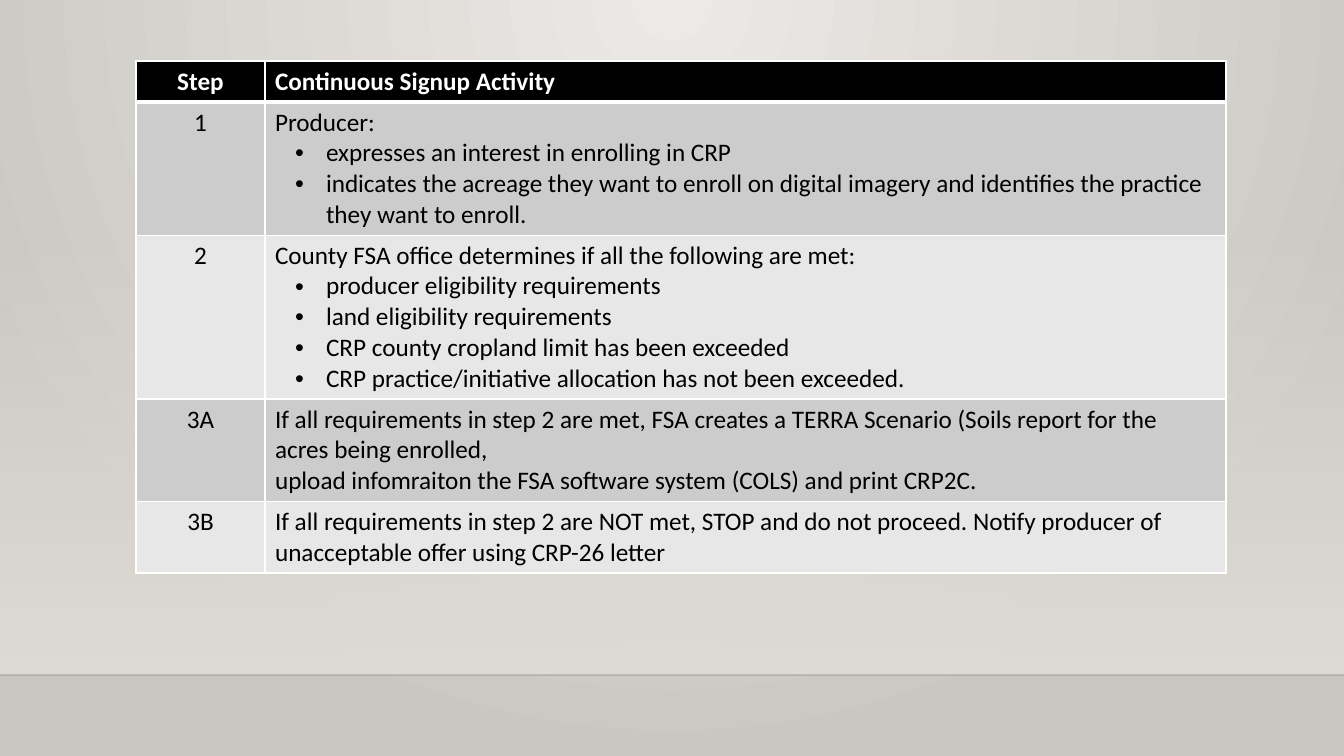
import pptx
import pptx.dml.color
import pptx.enum.shapes
import pptx.enum.text
import pptx.oxml.ns
import pptx.util
from dataclasses import dataclass
from lxml import etree

HEADER = ("Step", ["Continuous Signup Activity"])
STEPS = [
    ("1", ["Producer:",
           "• expresses an interest in enrolling in CRP",
           "• indicates the acreage they want to enroll on digital imagery and "
           "identifies the practice they want to enroll."]),
    ("2", ["County FSA office determines if all the following are met:",
           "• producer eligibility requirements",
           "• land eligibility requirements",
           "• CRP county cropland limit has been exceeded",
           "• CRP practice/initiative allocation has not been exceeded."]),
    ("3A", ["If all requirements in step 2 are met, FSA creates a TERRA Scenario "
            "(Soils report for the acres being enrolled,",
            "upload infomraiton the FSA software system (COLS) and print CRP2C."]),
    ("3B", ["If all requirements in step 2 are NOT met, STOP and do not proceed. "
            "Notify producer of unacceptable offer using CRP-26 letter"]),
]


@dataclass(frozen=True)
class Theme:
    font: str = "Calibri"
    size: int = 18
    header_fill: str = "000000"
    header_text: str = "FFFFFF"
    text: str = "000000"
    bands: tuple = ("CCCCCC", "E7E7E7")
    border: str = "FFFFFF"
    backdrop: tuple = ("ECEAE7", "CAC7C1")
    wall: str = "DFDBD5"
    edge: str = "000001"


THEME = Theme()
SLIDE_W, SLIDE_H = 1344, 756
WALL_TOP, FLOOR_Y = 223, 675
TABLE_X, TABLE_Y, TABLE_H = 136, 61, 505
COLUMNS = (129, 961)
ROW_H = 41  # minimum; rows grow with their text
BULLET_LEFT, BULLET_HANG = 51, 31


def px(n):
    return pptx.util.Emu(round(n * 914400 / 100.8))


def rgb(color):
    return pptx.dml.color.RGBColor.from_string(color)


def add(parent, tag, **attributes):
    element = etree.SubElement(parent, pptx.oxml.ns.qn(tag))
    for name, value in attributes.items():
        element.set(name, str(value))
    return element


def set_gradient(fill, colors):
    fill.gradient()
    for stop, color in zip(fill.gradient_stops, colors):
        stop.color.rgb = rgb(color)


def set_alpha(element, percent):
    """Make the first colour inside element partly transparent."""
    color = next(element.iter(pptx.oxml.ns.qn("a:srgbClr")))
    add(color, "a:alpha", val=percent * 1000)


def paint_background(s):
    set_gradient(s.background.fill, THEME.backdrop)
    grad = next(s.element.iter(pptx.oxml.ns.qn("a:gradFill")))
    grad.remove(grad.find(pptx.oxml.ns.qn("a:lin")))
    circle = add(grad, "a:path", path="circle")
    add(circle, "a:fillToRect", l=43000, t=0, r=43000, b=100000)


def add_wall(s):
    sp = s.shapes.add_shape(pptx.enum.shapes.MSO_SHAPE.RECTANGLE,
                            0, px(WALL_TOP), px(SLIDE_W), px(FLOOR_Y - WALL_TOP))
    set_gradient(sp.fill, (THEME.wall, THEME.wall))
    sp.fill.gradient_angle = 270
    set_alpha(sp.element.spPr, 0)
    sp.line.fill.background()
    sp.shadow.inherit = False


def add_floor_edge(s):
    line = s.shapes.add_connector(pptx.enum.shapes.MSO_CONNECTOR.STRAIGHT,
                                  0, px(FLOOR_Y), px(SLIDE_W), px(FLOOR_Y))
    line.line.color.rgb = rgb(THEME.edge)
    line.line.width = pptx.util.Pt(1)
    set_alpha(line.element.spPr, 20)
    add(line.element.spPr, "a:effectLst")


def set_borders(cell, top, bottom):
    """Draw the four cell borders; top and bottom widths are in points."""
    tc_pr = cell._tc.get_or_add_tcPr()
    for i, (side, width) in enumerate((("L", 1), ("R", 1), ("T", top), ("B", bottom))):
        ln = add(tc_pr, "a:ln" + side, w=pptx.util.Pt(width))
        add(add(ln, "a:solidFill"), "a:srgbClr", val=THEME.border)
        tc_pr.insert(i, ln)


def write_cell(cell, lines, color, bold, align):
    tf = cell.text_frame
    tf.text = "\n".join(line.removeprefix("• ") for line in lines)
    for p, line in zip(tf.paragraphs, lines):
        p.alignment = align
        if line.startswith("• "):
            p_pr = p._p.get_or_add_pPr()
            p_pr.set("marL", str(px(BULLET_LEFT)))
            p_pr.set("indent", str(-px(BULLET_HANG)))
            add(p_pr, "a:buFont", typeface="Arial")
            add(p_pr, "a:buChar", char="•")
        for r in p.runs:
            r.font.name = THEME.font
            r.font.size = pptx.util.Pt(THEME.size)
            r.font.bold = bold
            r.font.color.rgb = rgb(color)


def add_steps_table(s):
    rows = [HEADER] + STEPS
    frame = s.shapes.add_table(len(rows), len(COLUMNS), px(TABLE_X), px(TABLE_Y),
                               px(sum(COLUMNS)), px(ROW_H * len(rows)))
    table = frame.table
    for column, width in zip(table.columns, COLUMNS):
        column.width = px(width)
    for i, (step, activity) in enumerate(rows):
        header = i == 0
        fill = THEME.header_fill if header else THEME.bands[(i - 1) % 2]
        color = THEME.header_text if header else THEME.text
        table.rows[i].height = px(ROW_H)
        for j, lines in enumerate(([step], activity)):
            cell = table.cell(i, j)
            cell.fill.solid()
            cell.fill.fore_color.rgb = rgb(fill)
            set_borders(cell, top=3 if i == 1 else 1, bottom=3 if header else 1)
            if header:
                cell.vertical_anchor = pptx.enum.text.MSO_ANCHOR.BOTTOM
            align = pptx.enum.text.PP_ALIGN.LEFT if j else pptx.enum.text.PP_ALIGN.CENTER
            write_cell(cell, lines, color, header, align)
    frame.height = px(TABLE_H)


def main():
    prs = pptx.Presentation()
    prs.slide_width, prs.slide_height = px(SLIDE_W), px(SLIDE_H)
    s = prs.slides.add_slide(prs.slide_layouts[6])
    paint_background(s)
    add_wall(s)
    add_floor_edge(s)
    add_steps_table(s)
    prs.save("out.pptx")


if __name__ == "__main__":
    main()
